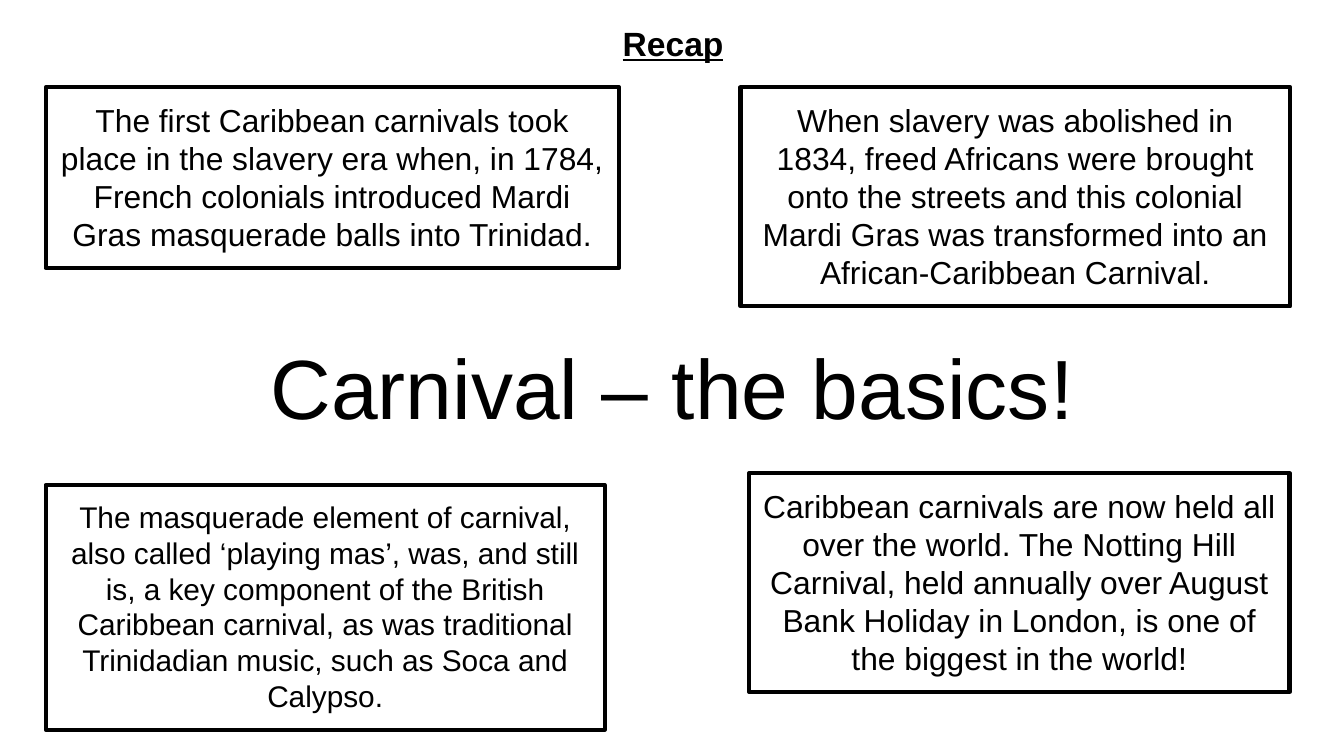
from dataclasses import dataclass

from pptx import Presentation
from pptx import util as u
from pptx.dml.color import RGBColor
from pptx.enum import text

PX = 4572  # EMU per px, at 200 px to the inch
FONT = "Arial"
COLORS = {"ink": "000000", "paper": "FFFFFF"}


@dataclass
class Fact:
    left: int
    top: int
    width: int
    height: int
    words: str
    size: int = 17


FACTS = [
    Fact(68, 130, 853, 269,
         "The first Caribbean carnivals took place in the slavery era when, "
         "in 1784, French colonials introduced Mardi Gras masquerade balls "
         "into Trinidad."),
    Fact(1102, 130, 818, 326,
         "When slavery was abolished in 1834, freed Africans were brought "
         "onto the streets and this colonial Mardi Gras was transformed into "
         "an African-Caribbean Carnival."),
    Fact(68, 722, 832, 364,
         "The masquerade element of carnival, also called ‘playing mas’, was, "
         "and still is, a key component of the British Caribbean carnival, as "
         "was traditional Trinidadian music, such as Soca and Calypso.",
         size=16),
    Fact(1115, 704, 804, 326,
         "Caribbean carnivals are now held all over the world. The Notting "
         "Hill Carnival, held annually over August Bank Holiday in London, is "
         "one of the biggest in the world!"),
]


def px(n: int) -> u.Emu:
    return u.Emu(n * PX)


def color(name: str) -> RGBColor:
    return RGBColor.from_string(COLORS[name])


def write(sp, words: str, *, size: int, bold=False, underline=False,
          align=text.PP_ALIGN.CENTER, anchor=text.MSO_ANCHOR.TOP,
          inset_x=20, inset_y=20, wrap=True, spacing=1.0,
          fit=text.MSO_AUTO_SIZE.SHAPE_TO_FIT_TEXT) -> None:
    """Put one formatted paragraph into a shape."""
    tf = sp.text_frame
    tf.auto_size = fit
    tf.word_wrap = wrap
    tf.vertical_anchor = anchor
    tf.margin_left = tf.margin_right = px(inset_x)
    tf.margin_top = tf.margin_bottom = px(inset_y)
    p = tf.paragraphs[0]
    p.alignment = align
    p.line_spacing = spacing
    r = p.add_run()
    r.text = words
    r.font.name = FONT
    r.font.size = u.Pt(size)
    r.font.bold = bold
    r.font.underline = underline
    r.font.color.rgb = color("ink")


def draw_fact(s, fact: Fact) -> None:
    """Draw one outlined box with its text."""
    sp = s.shapes.add_textbox(px(fact.left), px(fact.top),
                              px(fact.width), px(fact.height))
    sp.line.color.rgb = color("ink")
    sp.line.width = u.Pt(2.25)
    write(sp, fact.words, size=fact.size)


def main() -> None:
    prs = Presentation()
    prs.slide_width, prs.slide_height = px(2000), px(1125)
    s = prs.slides.add_slide(prs.slide_layouts[0])
    s.background.fill.solid()
    s.background.fill.fore_color.rgb = color("paper")

    # Main title; the subtitle is not needed
    subtitle = s.placeholders[1].element
    subtitle.getparent().remove(subtitle)
    title = s.shapes.title
    title.left, title.top = px(68), px(448)
    title.width, title.height = px(1864), px(224)
    write(title, "Carnival – the basics!", size=45, spacing=0.9,
          anchor=text.MSO_ANCHOR.BOTTOM, fit=text.MSO_AUTO_SIZE.NONE)

    # Four facts around the title
    for fact in FACTS:
        draw_fact(s, fact)

    # Heading
    heading = s.shapes.add_textbox(px(907), px(24), px(192), px(80))
    write(heading, "Recap", size=18, bold=True, underline=True,
          align=text.PP_ALIGN.LEFT, inset_y=10, wrap=False)

    prs.save("out.pptx")


if __name__ == "__main__":
    main()
